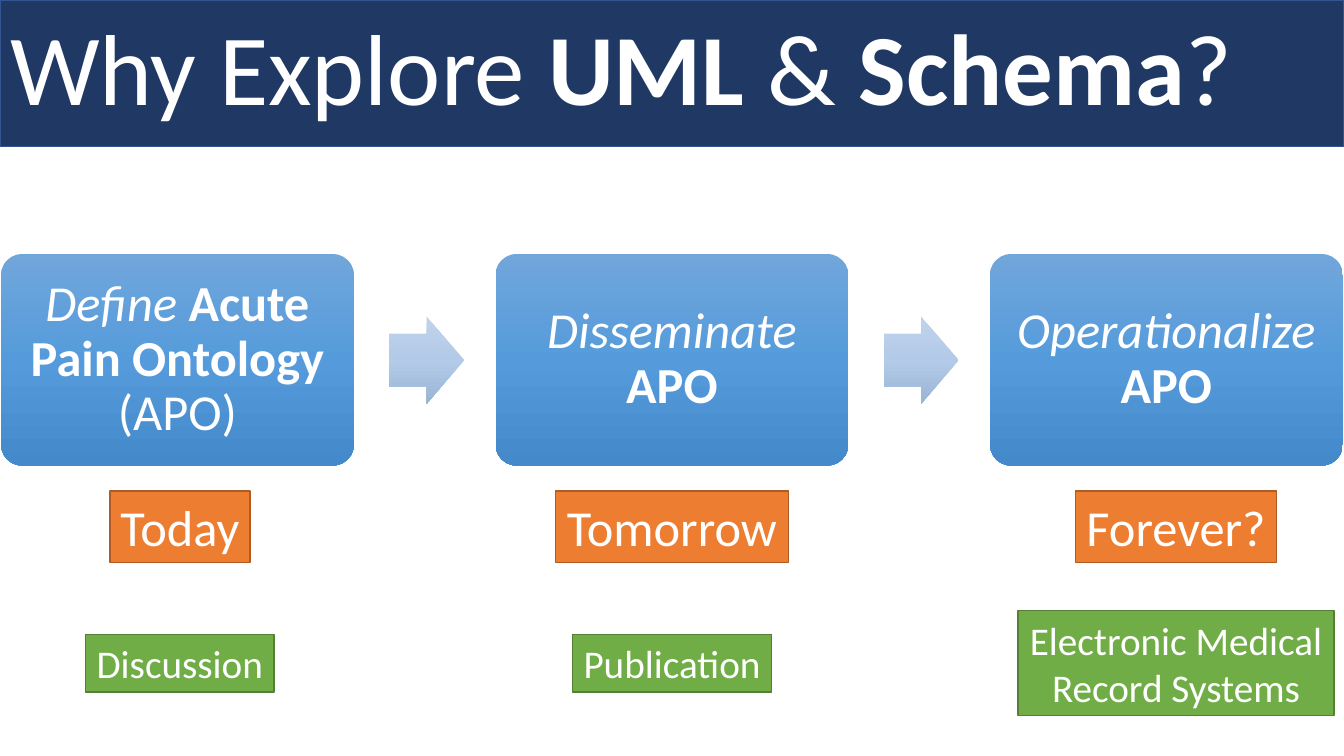
from copy import deepcopy

from pptx import Presentation
from pptx.dml.color import RGBColor
from pptx.enum import shapes, text
from pptx.util import Pt

WHITE = RGBColor(0xFF, 0xFF, 0xFF)
NAVY = RGBColor(0x20, 0x38, 0x64)
NAVY_EDGE = RGBColor(0x32, 0x54, 0x91)
ORANGE = RGBColor(0xED, 0x7D, 0x31)
ORANGE_EDGE = RGBColor(0xAF, 0x5C, 0x24)
GREEN = RGBColor(0x70, 0xAD, 0x47)
GREEN_EDGE = RGBColor(0x53, 0x80, 0x35)
BLUES = [RGBColor(0x71, 0xA6, 0xDB), RGBColor(0x55, 0x9B, 0xDB), RGBColor(0x44, 0x8A, 0xCA)]
PALE_BLUES = [RGBColor(0xC0, 0xD2, 0xEB), RGBColor(0xB3, 0xCB, 0xE9), RGBColor(0x9B, 0xB4, 0xD3)]

STEP_PITCH = 353.2


def write(sp, size, pieces, align):
    """Fill a shape with one paragraph of (text, style) runs; style is "", "b" or "i"."""
    tf = sp.text_frame
    tf.vertical_anchor = text.MSO_ANCHOR.MIDDLE
    p = tf.paragraphs[0]
    p.alignment = align
    for words, style in pieces:
        if words == "\n":
            p.add_line_break()
            continue
        r = p.add_run()
        r.text = words
        r.font.name, r.font.size = "Calibri", Pt(size)
        r.font.color.rgb = WHITE
        r.font.bold, r.font.italic = style == "b", style == "i"
    return p


def add_gradient_shape(kind, box, colours, adjustments):
    sp = s.shapes.add_shape(kind, *map(Pt, box))
    sp.shadow.inherit = False
    sp.line.fill.background()
    for i, value in enumerate(adjustments):
        sp.adjustments[i] = value
    sp.fill.gradient()
    sp.fill.gradient_angle = 270
    stop_list = sp._element.spPr.find(".//{*}gsLst")
    stop_list.append(deepcopy(stop_list[-1]))
    for stop, position, colour in zip(sp.fill.gradient_stops, (0, 0.5, 1), colours):
        stop.position = position
        stop.color.rgb = colour
    return sp


prs = Presentation()
prs.slide_width, prs.slide_height = Pt(960), Pt(540)
s = prs.slides.add_slide(prs.slide_layouts[5])

# Title band
title = s.shapes.title
title.left, title.top, title.width, title.height = Pt(0), Pt(0), Pt(960), Pt(104.5)
title.fill.solid()
title.fill.fore_color.rgb = NAVY
title.line.color.rgb = NAVY_EDGE
title.line.width = Pt(1)
title.text_frame.auto_size = text.MSO_AUTO_SIZE.NONE
p = write(title, 72, [("Why Explore ", ""), ("UML", "b"), (" & ", ""), ("Schema", "b"), ("?", "")],
          text.PP_ALIGN.LEFT)
p.line_spacing = 0.9

# Process steps joined by arrows
steps = [
    [("Define ", "i"), ("Acute Pain Ontology ", "b"), ("(APO)", "")],
    [("Disseminate ", "i"), ("APO", "b")],
    [("Operationalize", "i"), ("\n", ""), ("APO", "b")],
]
for i, pieces in enumerate(steps):
    left = 0.8 + i * STEP_PITCH
    step = add_gradient_shape(shapes.MSO_SHAPE.ROUNDED_RECTANGLE, (left, 181.4, 252, 151.2),
                              BLUES, [0.1])
    tf = step.text_frame
    tf.word_wrap = True
    tf.margin_left = tf.margin_right = tf.margin_top = tf.margin_bottom = Pt(10.8)
    p = write(step, 36, pieces, text.PP_ALIGN.CENTER)
    p.line_spacing = 0.9
    if i < len(steps) - 1:
        add_gradient_shape(shapes.MSO_SHAPE.RIGHT_ARROW, (left + 277.2, 226, 53.4, 62.5),
                           PALE_BLUES, [0.6, 0.5])

# Labels under each step: text, width, height
column_centres = (128.5, 480, 840)
label_rows = [
    (376.2, 36, ORANGE, ORANGE_EDGE,
     [("Today", 100, 51), ("Tomorrow", 166.4, 51), ("Forever?", 143.4, 51)]),
    (473.6, 28, GREEN, GREEN_EDGE,
     [("Discussion", 134.8, 41.2), ("Publication", 142.4, 41.2),
      ("Electronic Medical\nRecord Systems", 225.6, 74.9)]),
]
for middle, size, colour, edge, labels in label_rows:
    for centre, (words, width, height) in zip(column_centres, labels):
        sp = s.shapes.add_shape(shapes.MSO_SHAPE.RECTANGLE, Pt(centre - width / 2),
                                Pt(middle - height / 2), Pt(width), Pt(height))
        sp.shadow.inherit = False
        sp.fill.solid()
        sp.fill.fore_color.rgb = colour
        sp.line.color.rgb = edge
        sp.line.width = Pt(1)
        sp.text_frame.word_wrap = False
        sp.text_frame.auto_size = text.MSO_AUTO_SIZE.SHAPE_TO_FIT_TEXT
        first, *rest = words.split("\n")
        pieces = [(first, "")]
        for line in rest:
            pieces += [("\n", ""), (line, "")]
        write(sp, size, pieces, text.PP_ALIGN.CENTER)

prs.save("out.pptx")
